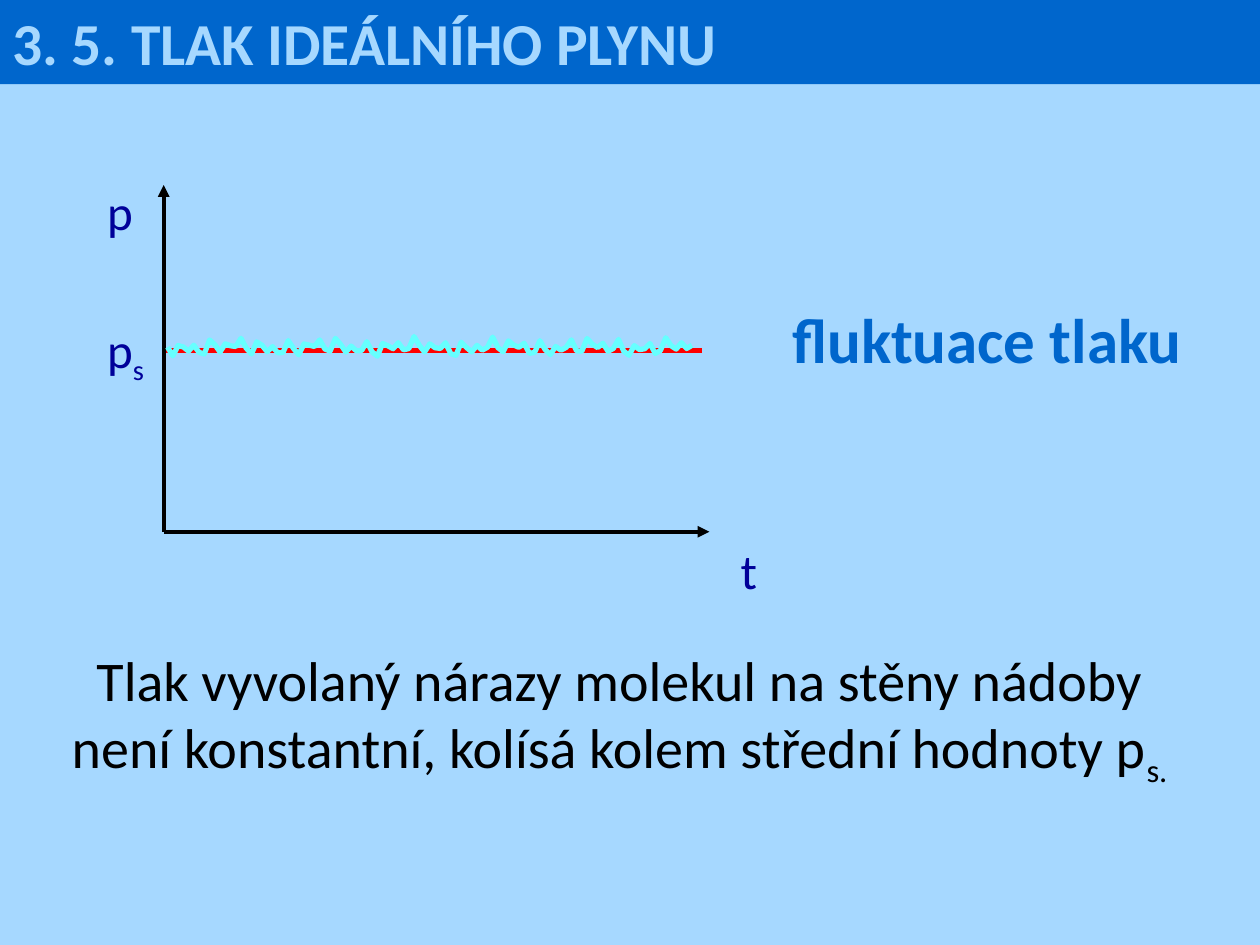
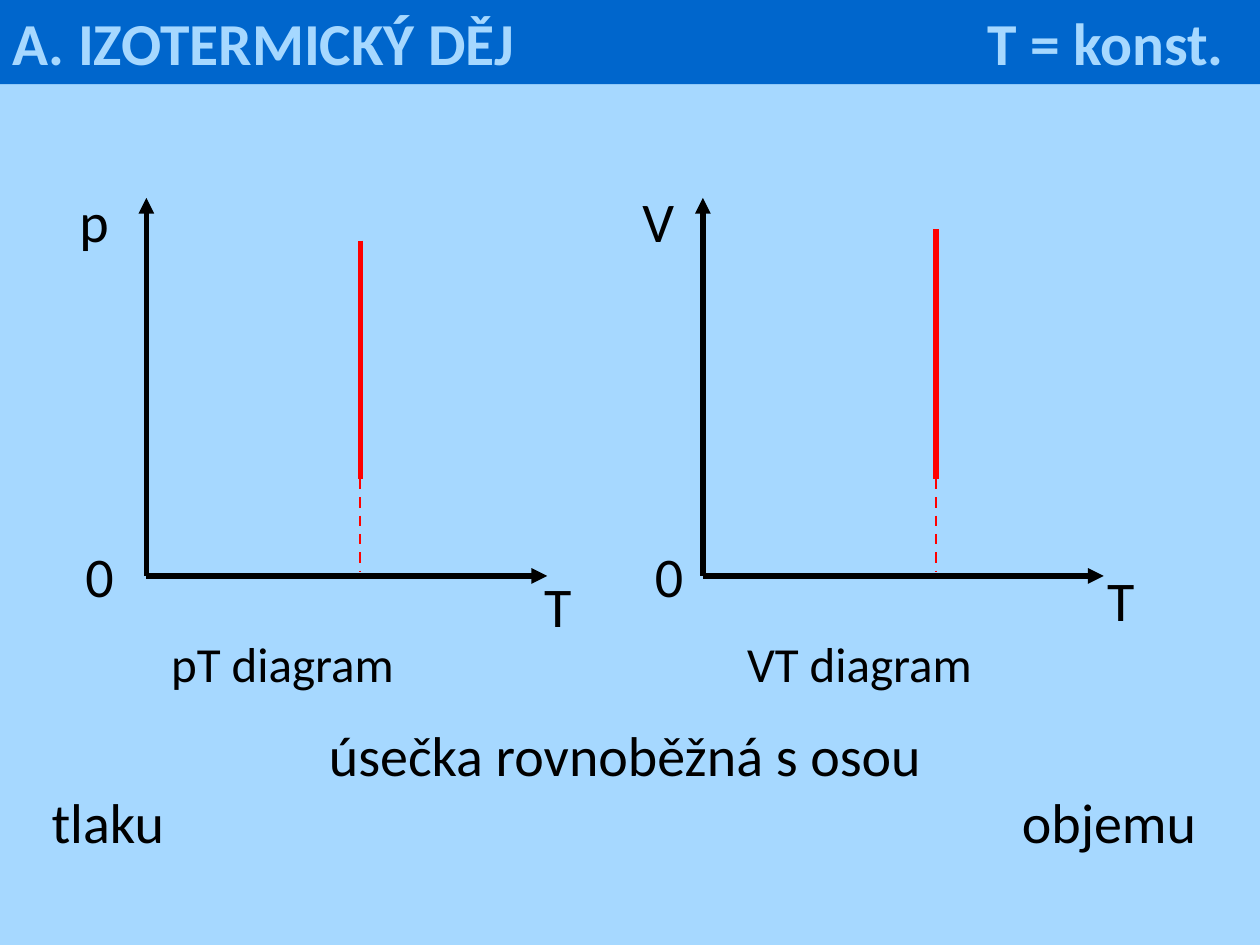
from math import sin

from pptx import Presentation
from pptx.dml.color import RGBColor
from pptx.enum.dml import MSO_LINE_DASH_STYLE as DASH
from pptx.enum.shapes import MSO_CONNECTOR as CONN, MSO_SHAPE as SHAPE
from pptx.enum.text import PP_ALIGN as ALIGN
from pptx.oxml.ns import qn
from pptx.util import Cm, Pt
from lxml.etree import SubElement

FONT = "Calibri"
SKY, BLUE, NAVY = "A6D8FF", "0066CC", "000099"
BLACK, RED, CYAN = "000000", "FF0000", "66FFFF"
SLIDE_W, SLIDE_H, BAND_H = 25.4, 19.05, 1.7
SUBSCRIPT = "-25000"


def rgb(color):
    return RGBColor.from_string(color)


def add_run(p, text, size, color, bold=False, sub=False):
    r = p.add_run()
    r.text = text
    r.font.name, r.font.size, r.font.bold = FONT, Pt(size), bold
    r.font.color.rgb = rgb(color)
    if sub:
        r.font._element.set("baseline", SUBSCRIPT)


def set_tab(p, position):
    tabs = SubElement(p._p.get_or_add_pPr(), qn("a:tabLst"))
    SubElement(tabs, qn("a:tab"), pos=str(Cm(position)), algn="l")


def add_text(s, x, y, w, h, *lines, sub="", size=32, color=BLACK, bold=False,
             align=ALIGN.LEFT):
    tf = s.shapes.add_textbox(Cm(x), Cm(y), Cm(w), Cm(h)).text_frame
    tf.word_wrap = True
    for i, line in enumerate(lines):
        p = tf.add_paragraph() if i else tf.paragraphs[0]
        p.alignment = align
        add_run(p, line, size, color, bold)
    if sub:
        add_run(p, sub, size, color, bold, sub=True)
    return tf


def add_label(s, x, y, text, w=1.4, **style):
    add_text(s, x, y, w, 1.6, text, **style)


def add_line(s, x1, y1, x2, y2, color=BLACK, width=3, arrow=False, dash=None):
    line = s.shapes.add_connector(CONN.STRAIGHT, Cm(x1), Cm(y1), Cm(x2), Cm(y2))
    line.line.color.rgb = rgb(color)
    line.line.width = Pt(width)
    if dash:
        line.line.dash_style = dash
    if arrow:
        SubElement(line.line._get_or_add_ln(), qn("a:tailEnd"), type="triangle")
    SubElement(line._element.spPr, qn("a:effectLst"))


def add_axes(s, x, y, width, height, weight=3):
    add_line(s, x, y, x, y - height, width=weight, arrow=True)
    add_line(s, x, y, x + width, y, width=weight, arrow=True)


def add_fluctuation(s, left, right, mean, amplitude, steps=100):
    waves = ((0.5, 2.1), (0.3, 1.3), (0.2, 0.37))
    points = []
    for i in range(steps + 1):
        x = left + (right - left) * i / steps
        noise = sum(share * sin(rate * i) for share, rate in waves)
        points.append((Cm(x), Cm(mean + amplitude * noise)))
    builder = s.shapes.build_freeform(*points[0])
    builder.add_line_segments(points[1:], close=False)
    sp = builder.convert_to_shape()
    sp.shadow.inherit = False
    sp.fill.background()
    sp.line.color.rgb = rgb(CYAN)
    sp.line.width = Pt(3)


def add_slide(prs, title, tab=None):
    s = prs.slides.add_slide(prs.slide_layouts[6])
    s.background.fill.solid()
    s.background.fill.fore_color.rgb = rgb(SKY)
    band = s.shapes.add_shape(SHAPE.RECTANGLE, 0, 0, Cm(SLIDE_W), Cm(BAND_H))
    band.shadow.inherit = False
    band.fill.solid()
    band.fill.fore_color.rgb = rgb(BLUE)
    band.line.fill.background()
    p = band.text_frame.paragraphs[0]
    p.alignment = ALIGN.LEFT
    if tab:
        set_tab(p, tab)
    add_run(p, title, 34, SKY, bold=True)
    return s


def add_isotherm(s, quantity, origin_x, quantity_x, zero_x, t_x, t_y,
                 caption_x, isotherm_x, isotherm_top):
    origin_y, isotherm_end = 11.61, 9.65
    add_axes(s, origin_x, origin_y, width=8.08, height=7.62)
    add_line(s, isotherm_x, isotherm_top, isotherm_x, isotherm_end, RED)
    add_line(s, isotherm_x, isotherm_end, isotherm_x, origin_y - 0.1, RED, 1.5,
             dash=DASH.DASH)
    add_label(s, quantity_x, 3.63, quantity)
    add_label(s, zero_x, 10.8, "0")
    add_label(s, t_x, t_y, "T")
    add_label(s, caption_x, 12.65, f"{quantity}T diagram", w=7.3, size=28)


def build_pressure(prs):
    s = add_slide(prs, "3. 5. TLAK IDEÁLNÍHO PLYNU")
    origin_x, origin_y, mean_y = 3.3, 10.72, 7.06
    add_axes(s, origin_x, origin_y, width=11, height=6.99, weight=2.25)

    axis_style = {"size": 28, "color": NAVY}
    pressure_x = origin_x - 1.39
    add_label(s, pressure_x, 3.53, "p", **axis_style)
    add_label(s, pressure_x, mean_y - 0.74, "p", sub="s", **axis_style)
    add_label(s, 14.68, origin_y + 0.05, "t", **axis_style)

    add_line(s, origin_x + 0.05, mean_y, 14.15, mean_y, RED)
    add_fluctuation(s, left=origin_x + 0.08, right=13.95, mean=mean_y - 0.06,
                    amplitude=0.22)

    add_text(s, 0.3, 12.88, 24.38, 3,
             "Tlak vyvolaný nárazy molekul na stěny nádoby",
             "není konstantní, kolísá kolem střední hodnoty p",
             sub="s.", align=ALIGN.CENTER)
    add_text(s, 15.57, 5.94, 8.66, 1.8, "fluktuace tlaku",
             size=36, color=BLUE, bold=True, align=ALIGN.CENTER)


def build_isothermal(prs):
    s = add_slide(prs, "A. IZOTERMICKÝ DĚJ\tT = konst.", tab=19.66)
    add_isotherm(s, "p", origin_x=2.95, quantity_x=1.35, zero_x=1.47,
                 t_x=10.72, t_y=11.4, caption_x=3.2,
                 isotherm_x=7.26, isotherm_top=4.85)
    add_isotherm(s, "V", origin_x=14.17, quantity_x=12.7, zero_x=12.95,
                 t_x=22.07, t_y=11.28, caption_x=14.81,
                 isotherm_x=18.87, isotherm_top=4.62)
    tf = add_text(s, 0.79, 14.4, 23.88, 4.37,
                  "úsečka rovnoběžná s osou ", "tlaku\tobjemu")
    shared, ends = tf.paragraphs
    shared.alignment = ALIGN.CENTER
    set_tab(ends, 19.56)


def main():
    prs = Presentation()
    prs.slide_width, prs.slide_height = Cm(SLIDE_W), Cm(SLIDE_H)
    build_pressure(prs)
    build_isothermal(prs)
    prs.save("out.pptx")


if __name__ == "__main__":
    main()
